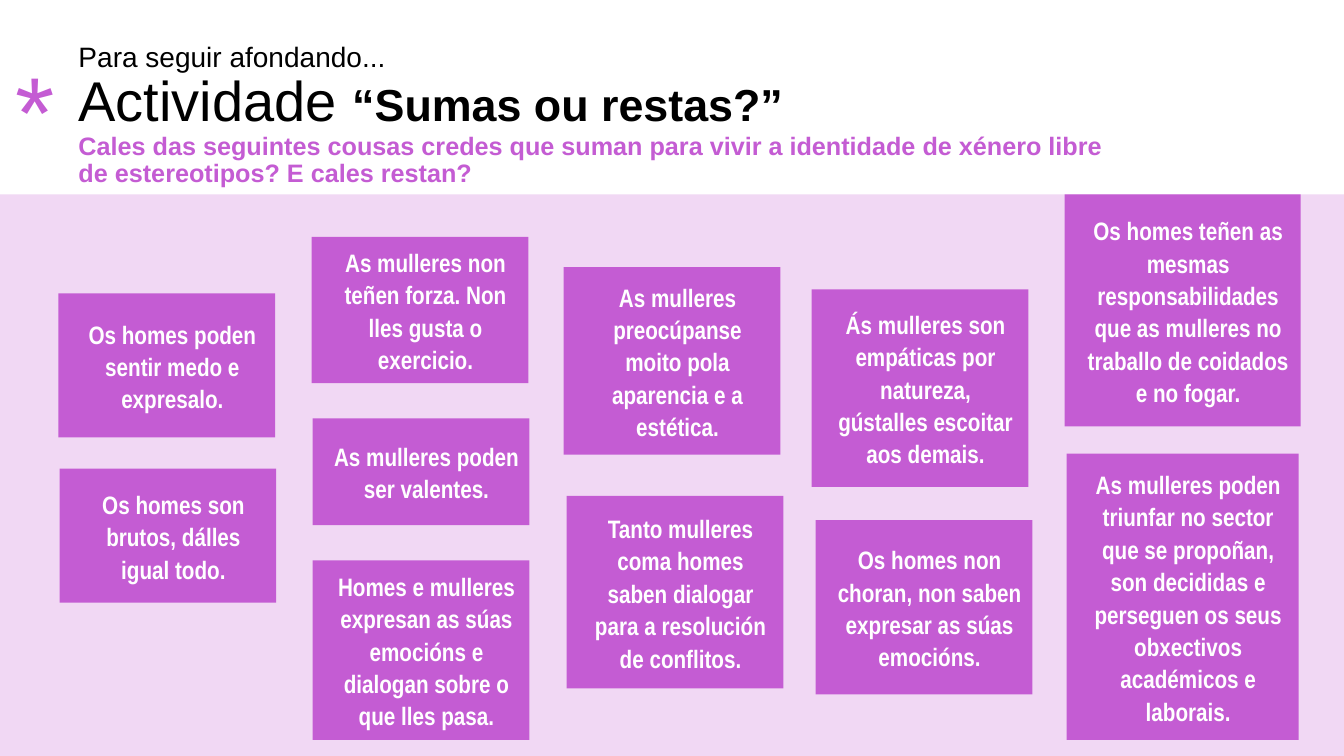
"""Builds the slide for the activity "Sumas ou restas?"."""
import pptx
import pptx.dml.color
import pptx.enum.shapes
import pptx.enum.text
import pptx.util
from pptx.util import Inches

PURPLE = "C45CD3"
LILAC = "F1D8F4"
BLACK = "000000"
WHITE = "FFFFFF"
CARD_WIDTH = 2.15


def rgb(value):
    return pptx.dml.color.RGBColor.from_string(value)


def style(span, size, color, bold=False, name="Arial"):
    span.font.name = name
    span.font.size = pptx.util.Pt(size)
    span.font.bold = bold
    span.font.color.rgb = rgb(color)


deck = pptx.Presentation()
deck.slide_width = Inches(13.33)
deck.slide_height = Inches(7.5)
page = deck.slides.add_slide(deck.slide_layouts[6])
rectangle = pptx.enum.shapes.MSO_SHAPE.RECTANGLE
middle = pptx.enum.text.MSO_ANCHOR.MIDDLE

band = page.shapes.add_shape(rectangle, 0, Inches(1.93), deck.slide_width, Inches(5.57))
band.shadow.inherit = False
band.fill.solid()
band.fill.fore_color.rgb = rgb(LILAC)
band.line.fill.background()

title = page.shapes.add_textbox(Inches(0.68), Inches(0.25), Inches(12.65), Inches(1.79))
title.text_frame.word_wrap = True
title.text_frame.vertical_anchor = middle
para = title.text_frame.paragraphs[0]
para.line_spacing = 0.9
title_parts = [
    ("Para seguir afondando...", 20, BLACK, False, True),
    ("Actividade ", 40, BLACK, False, False),
    ("“Sumas ou restas?”", 32, BLACK, True, True),
    ("Cales das seguintes cousas credes que suman para vivir a identidade de xénero libre", 18, PURPLE, True, True),
    ("de estereotipos? E cales restan?", 18, PURPLE, True, False),
]
for text, size, color, bold, breaks in title_parts:
    span = para.add_run()
    span.text = text
    style(span, size, color, bold)
    if breaks:
        para.add_line_break()

cards = [
    (0.58, 2.91, CARD_WIDTH, 1.43, "Os homes poden sentir medo e expresalo."),
    (0.59, 4.65, CARD_WIDTH, 1.33, "Os homes son brutos, dálles igual todo."),
    (3.09, 2.35, CARD_WIDTH, 1.45, "As mulleres non teñen forza. Non lles gusta o exercicio."),
    (3.1, 4.15, CARD_WIDTH, 1.06, "As mulleres poden ser valentes."),
    (3.1, 5.56, CARD_WIDTH, 1.78,
     "Homes e mulleres expresan as súas emocións e dialogan sobre o que lles pasa."),
    (5.59, 2.65, CARD_WIDTH, 1.86, "As mulleres preocúpanse moito pola aparencia e a estética."),
    (5.62, 4.92, CARD_WIDTH, 1.91,
     "Tanto mulleres coma homes saben dialogar para a resolución de conflitos."),
    (8.05, 2.87, CARD_WIDTH, 1.96,
     "Ás mulleres son empáticas por natureza, gústalles escoitar aos demais."),
    (8.09, 5.16, CARD_WIDTH, 1.73, "Os homes non choran, non saben expresar as súas emocións."),
    (10.56, 1.93, 2.34, 2.3,
     "Os homes teñen as mesmas responsabilidades que as mulleres no traballo de coidados e no fogar."),
    (10.58, 4.5, 2.3, 2.84,
     "As mulleres poden triunfar no sector que se propoñan, son decididas e perseguen os seus "
     "obxectivos académicos e laborais."),
]
for left, top, width, height, text in cards:
    card = page.shapes.add_shape(rectangle, Inches(left), Inches(top), Inches(width), Inches(height))
    card.shadow.inherit = False
    card.fill.solid()
    card.fill.fore_color.rgb = rgb(PURPLE)
    card.line.fill.background()
    card.text_frame.word_wrap = True
    card.text_frame.vertical_anchor = middle
    card.text_frame.text = text
    para = card.text_frame.paragraphs[0]
    para._p.get_or_add_pPr().set("marL", str(Inches(0.11)))
    para.alignment = pptx.enum.text.PP_ALIGN.CENTER
    para.line_spacing = 1.07
    para.space_after = pptx.util.Pt(8)
    style(para.runs[0], 18, WHITE, True, "Arial Narrow")

asterisk = page.shapes.add_textbox(Inches(0.06), Inches(0.52), Inches(1.04), Inches(1.25))
asterisk.text_frame.word_wrap = True
asterisk.text_frame.vertical_anchor = middle
asterisk.text_frame.text = "*"
para = asterisk.text_frame.paragraphs[0]
para.line_spacing = 0.9
style(para.runs[0], 72, PURPLE)

deck.save("out.pptx")
